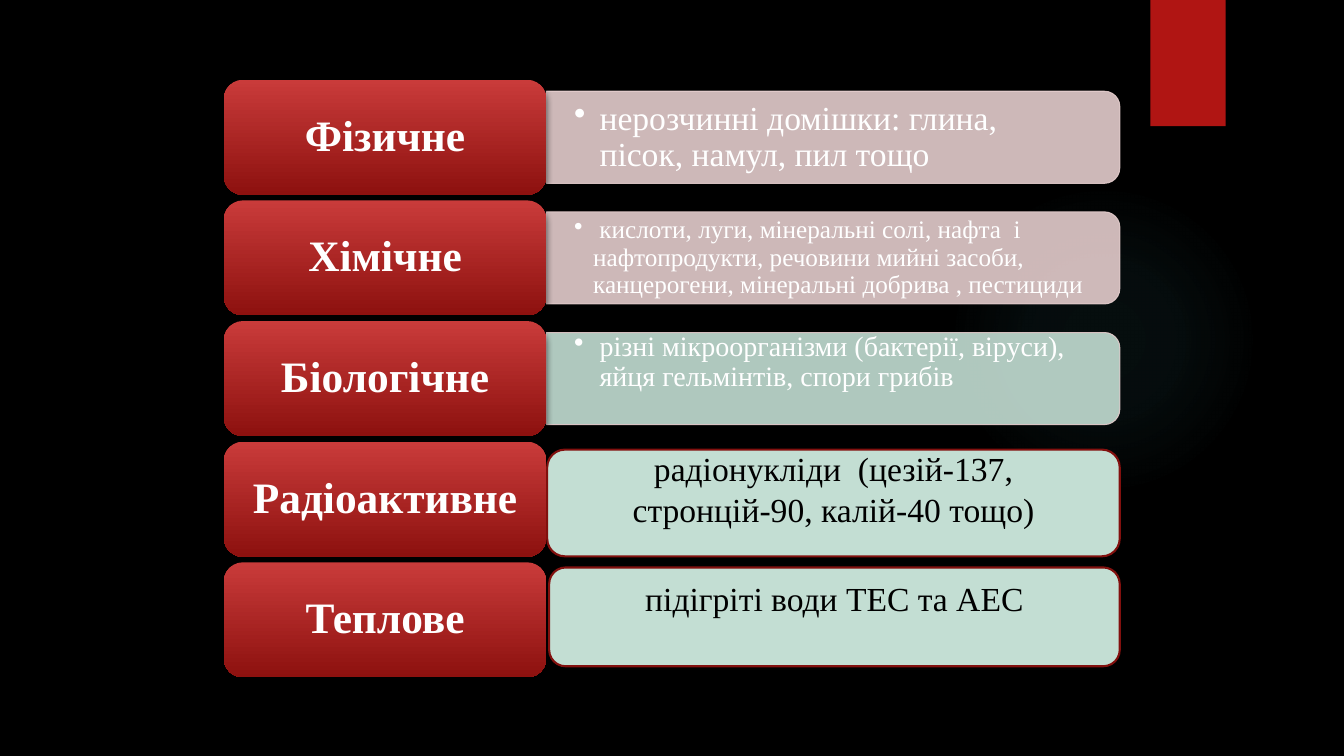
from lxml.etree import SubElement
from pptx import Presentation
from pptx.dml.color import RGBColor
from pptx.enum.shapes import MSO_SHAPE
from pptx.enum.text import MSO_ANCHOR, PP_ALIGN
from pptx.oxml import parse_xml
from pptx.oxml.ns import nsdecls, qn
from pptx.util import Cm, Pt

BLACK = RGBColor(0x00, 0x00, 0x00)
WHITE = RGBColor(0xFF, 0xFF, 0xFF)
RIBBON_RED = RGBColor(0xB0, 0x15, 0x13)
LIGHT_RED = RGBColor(0xC9, 0x3B, 0x3A)
DARK_RED = RGBColor(0x8D, 0x11, 0x0F)
BORDER_RED = RGBColor(0x82, 0x10, 0x0E)
PINK = RGBColor(0xE4, 0xCC, 0xCC)
MINT = RGBColor(0xC3, 0xDE, 0xD3)
GLOW_TEAL = RGBColor(0x50, 0xB9, 0xC1)

ROW_TOP, ROW_PITCH = 2.01, 3.04
LABEL_LEFT, LABEL_WIDTH, LABEL_HEIGHT = 5.64, 8.13, 2.9
PANEL_LEFT, PANEL_WIDTH, PANEL_HEIGHT = 13.77, 14.45, 2.32

LABELS = ["Фізичне", "Хімічне", "Біологічне", "Радіоактивне", "Теплове"]

# Text, size, hanging indent, upward shift of the text, panel colour
PANELS = [
    ("нерозчинні домішки: глина, пісок, намул, пил тощо", 24, 0.64, 0, PINK),
    (" кислоти, луги, мінеральні солі, нафта  і нафтопродукти, речовини мийні засоби, "
     "канцерогени, мінеральні добрива , пестициди", 18, 0.48, 0, PINK),
    ("різні мікроорганізми (бактерії, віруси), яйця гельмінтів, спори грибів",
     20, 0.64, 0.4, MINT),
]

# Text, left, top, width, height, bottom inset
BOXES = [
    ("підігріті води ТЕС та АЕС", 13.84, 14.3, 14.38, 2.49, 0.97),
    ("радіонукліди  (цезій-137, стронцій-90, калій-40 тощо)",
     13.79, 11.33, 14.43, 2.69, 0.73),
]


class SlideBuilder:
    def __init__(self, slide, font_name):
        self.slide = slide
        self.font_name = font_name

    def add_plain_shape(self, kind, left, top, width, height, fill=None):
        shape = self.slide.shapes.add_shape(
            kind, Cm(left), Cm(top), Cm(width), Cm(height))
        shape.shadow.inherit = False
        shape.line.fill.background()
        if fill is not None:
            shape.fill.solid()
            shape.fill.fore_color.rgb = fill
        return shape

    def set_text(self, shape, text, size, color, bold=False, align=PP_ALIGN.CENTER):
        frame = shape.text_frame
        frame.word_wrap = True
        frame.vertical_anchor = MSO_ANCHOR.MIDDLE
        frame.text = text
        paragraph = frame.paragraphs[0]
        paragraph.alignment = align
        font = paragraph.runs[0].font
        font.name, font.size, font.bold = self.font_name, Pt(size), bold
        font.color.rgb = color
        return paragraph

    def add_glow(self, left, top, diameter):
        """Add a faint round light that fades out towards its edge."""
        glow = self.add_plain_shape(MSO_SHAPE.OVAL, left, top, diameter, diameter)
        glow.fill.background()
        stops = "".join(
            f'<a:gs pos="{position * 1000}"><a:srgbClr val="{GLOW_TEAL}">'
            f'<a:alpha val="{opacity * 1000}"/></a:srgbClr></a:gs>'
            for position, opacity in ((0, 7), (36, 6), (69, 0), (100, 0)))
        gradient = parse_xml(
            f'<a:gradFill {nsdecls("a")}><a:gsLst>{stops}</a:gsLst><a:path path="circle">'
            '<a:fillToRect l="50000" t="50000" r="50000" b="50000"/></a:path></a:gradFill>')
        properties = glow._element.spPr
        properties.replace(properties.find(qn("a:noFill")), gradient)

    def add_panel(self, row, text, size, indent, shift, color):
        """Add a bulleted panel whose right-hand corners are rounded."""
        top = ROW_TOP + row * ROW_PITCH + (LABEL_HEIGHT - PANEL_HEIGHT) / 2
        offset = (PANEL_WIDTH - PANEL_HEIGHT) / 2
        panel = self.add_plain_shape(
            MSO_SHAPE.ROUND_2_SAME_RECTANGLE, PANEL_LEFT + offset, top - offset,
            PANEL_HEIGHT, PANEL_WIDTH, color)
        panel.rotation = 90
        panel.line.color.rgb = PINK
        panel.line.width = Pt(0.75)
        for solid_color in panel._element.spPr.iter(qn("a:srgbClr")):
            SubElement(solid_color, qn("a:alpha"), val="90000")

        text_box = self.slide.shapes.add_textbox(
            Cm(PANEL_LEFT), Cm(top - shift), Cm(14.33), Cm(PANEL_HEIGHT))
        frame = text_box.text_frame
        frame.margin_left = frame.margin_right = Cm(0.7)
        frame.margin_top = frame.margin_bottom = 0
        paragraph = self.set_text(text_box, text, size, WHITE, align=PP_ALIGN.LEFT)
        paragraph.line_spacing = 0.9
        properties = paragraph._p.get_or_add_pPr()
        properties.set("marL", str(Cm(indent)))
        properties.set("indent", str(-Cm(indent)))
        SubElement(properties, qn("a:buChar"), char="•")

    def add_label(self, row, text):
        label = self.add_plain_shape(
            MSO_SHAPE.ROUNDED_RECTANGLE, LABEL_LEFT, ROW_TOP + row * ROW_PITCH,
            LABEL_WIDTH, LABEL_HEIGHT)
        label.fill.gradient()
        label.fill.gradient_angle = 270
        for stop, color, position in zip(
                label.fill.gradient_stops, (LIGHT_RED, DARK_RED), (0, 1)):
            stop.color.rgb = color
            stop.position = position
        effects = label._element.spPr.find(qn("a:effectLst"))
        effects.append(parse_xml(
            f'<a:outerShdw {nsdecls("a")} blurRad="{Pt(5)}" dist="{Pt(3)}" dir="5400000" '
            f'rotWithShape="0"><a:srgbClr val="{BLACK}"><a:alpha val="60000"/>'
            '</a:srgbClr></a:outerShdw>'))
        self.set_text(label, text, 31, WHITE, bold=True).line_spacing = 0.9

    def add_box(self, text, left, top, width, height, bottom_inset):
        box = self.add_plain_shape(
            MSO_SHAPE.ROUNDED_RECTANGLE, left, top, width, height, MINT)
        box.line.color.rgb = BORDER_RED
        box.line.width = Pt(1.5)
        box.text_frame.margin_top = 0
        box.text_frame.margin_bottom = Cm(bottom_inset)
        self.set_text(box, text, 24, BLACK)


def main():
    presentation = Presentation()
    presentation.slide_width, presentation.slide_height = Cm(33.87), Cm(19.05)
    slide = presentation.slides.add_slide(presentation.slide_layouts[6])
    slide.background.fill.solid()
    slide.background.fill.fore_color.rgb = BLACK

    builder = SlideBuilder(slide, "Times New Roman")
    builder.add_glow(23.9, 4.65, 7.82)
    builder.add_plain_shape(MSO_SHAPE.RECTANGLE, 28.99, 0, 1.9, 3.18, RIBBON_RED)
    for row, panel in enumerate(PANELS):
        builder.add_panel(row, *panel)
    for row, label in enumerate(LABELS):
        builder.add_label(row, label)
    for box in BOXES:
        builder.add_box(*box)
    presentation.save("out.pptx")


if __name__ == "__main__":
    main()
